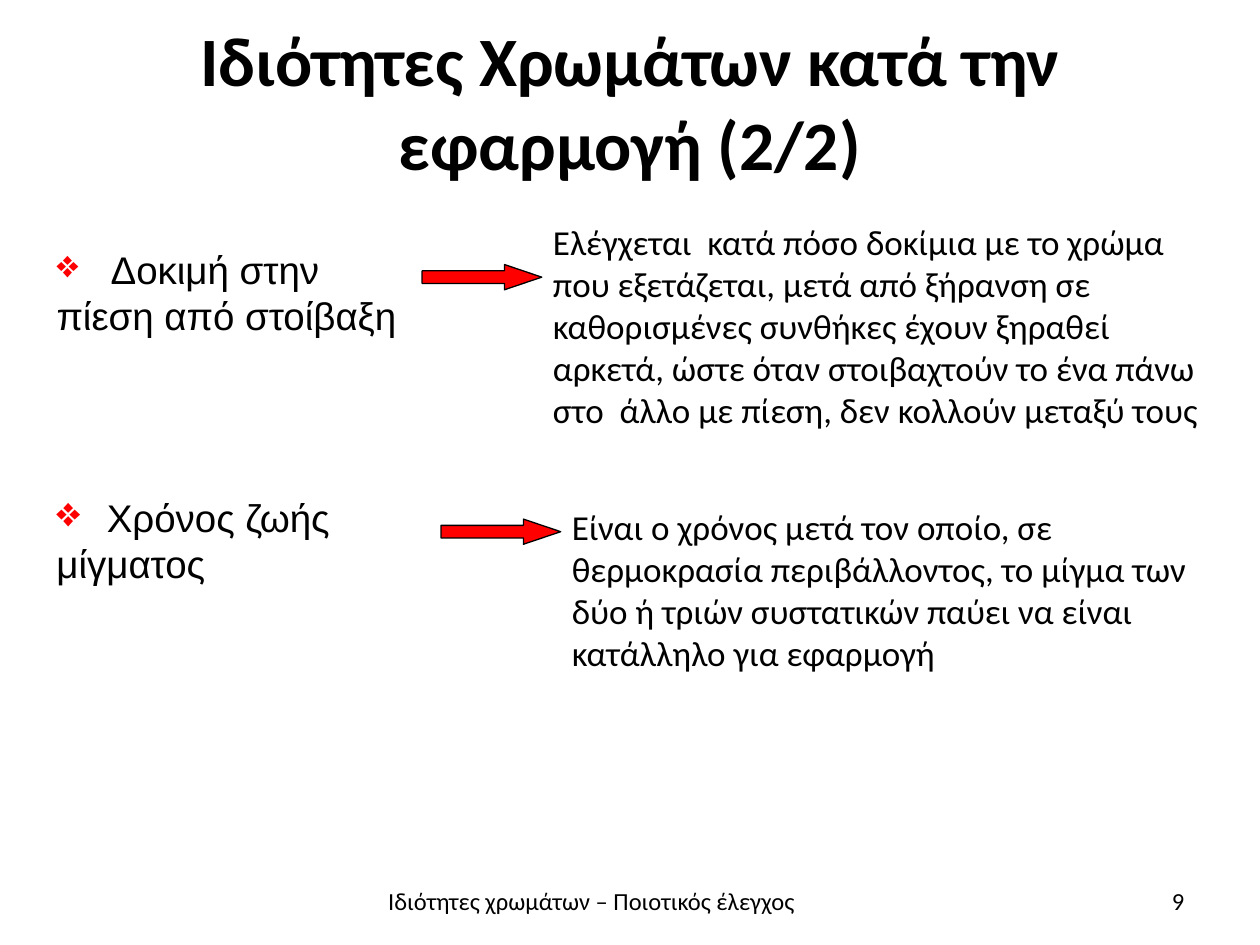
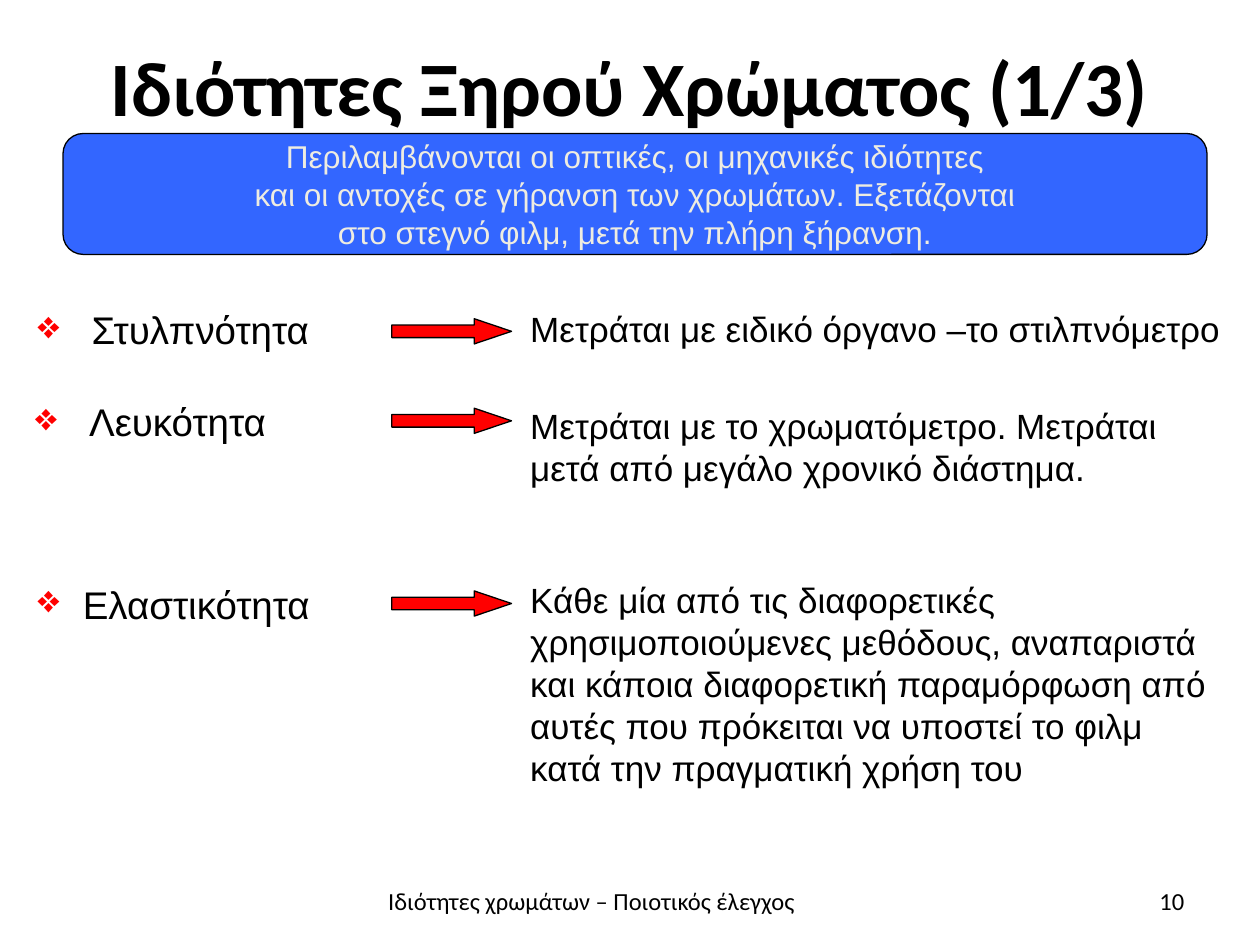
from copy import deepcopy

from lxml.etree import SubElement
from pptx import Presentation
from pptx.dml.color import RGBColor
from pptx.enum.shapes import MSO_SHAPE, PP_PLACEHOLDER
from pptx.enum.text import MSO_ANCHOR, PP_ALIGN
from pptx.oxml.ns import qn
from pptx.util import Inches, Pt

BLACK, RED, BLUE, CREAM = "000000", "FF0000", "3366FF", "EEECE1"
FOOTER = "Ιδιότητες χρωμάτων – Ποιοτικός έλεγχος"
FIRST_NUMBER = 9
ARROW_SIZE = Inches(0.95), Inches(0.2)

# Each row: label (text, box, text start, bullet %), arrow corner, explanation (text, box)
SLIDES = [
    {
        "title": "Ιδιότητες Χρωμάτων κατά την εφαρμογή (2/2)",
        "title_size": 39.6,
        "title_height": 1.18,
        "font": "Calibri",
        "intro": [],
        "rows": [
            (("Δοκιμή στην πίεση από στοίβαξη", (0.35, 1.9, 3.09, 1.4), 0.43, 100),
             (3.35, 2.1),
             ("Ελέγχεται  κατά πόσο δοκίμια με το χρώμα που εξετάζεται, μετά από "
              "ξήρανση σε καθορισμένες συνθήκες έχουν ξηραθεί αρκετά, ώστε όταν "
              "στοιβαχτούν το ένα πάνω στο  άλλο με πίεση, δεν κολλούν μεταξύ τους",
              (4.29, 1.7, 5.51, 1.78))),
            (("Χρόνος ζωής μίγματος", (0.35, 3.87, 3.07, 1.43), 0.4, 109),
             (3.5, 4.12),
             ("Είναι ο χρόνος μετά τον οποίο, σε θερμοκρασία περιβάλλοντος, το μίγμα "
              "των δύο ή τριών συστατικών παύει να είναι κατάλληλο για εφαρμογή",
              (4.44, 3.96, 5.36, 1.45))),
        ],
    },
    {
        "title": "Ιδιότητες Ξηρού Χρώματος (1/3)",
        "title_size": 44,
        "title_height": 0.94,
        "font": "Arial",
        "intro": [
            "Περιλαμβάνονται οι οπτικές, οι μηχανικές ιδιότητες",
            "και οι αντοχές σε γήρανση των χρωμάτων. Εξετάζονται",
            "στο στεγνό φιλμ, μετά την πλήρη ξήρανση.",
        ],
        "rows": [
            (("Στυλπνότητα", (0.2, 2.38, 3.33, 0.47), 0.43, 100),
             (3.11, 2.53),
             ("Μετράται με ειδικό όργανο –το στιλπνόμετρο", (4.11, 2.39, 5.68, 0.44))),
            (("Λευκότητα", (0.18, 3.11, 3.34, 0.47), 0.43, 100),
             (3.11, 3.24),
             ("Μετράται με το χρωματόμετρο. Μετράται μετά από μεγάλο χρονικό διάστημα.",
              (4.11, 3.16, 5.68, 0.77))),
            (("Ελαστικότητα", (0.2, 4.56, 3.07, 0.47), 0.36, 100),
             (3.11, 4.69),
             ("Κάθε μία από τις διαφορετικές χρησιμοποιούμενες μεθόδους, αναπαριστά και "
              "κάποια διαφορετική παραμόρφωση από αυτές που πρόκειται να υποστεί το φιλμ "
              "κατά την πραγματική χρήση του",
              (4.11, 4.54, 5.68, 1.78))),
        ],
    },
]


def paint(color_format, hex_color):
    color_format.rgb = RGBColor.from_string(hex_color)


def style(paragraph, size, font, color=BLACK, align=PP_ALIGN.LEFT, bold=False):
    paragraph.alignment = align
    paragraph.font.size = Pt(size)
    paragraph.font.name = font
    paragraph.font.bold = bold
    paint(paragraph.font.color, color)


deck = Presentation()
deck.slide_width, deck.slide_height = Inches(10), Inches(7.5)
title_only = deck.slide_layouts[5]

for number, content in enumerate(SLIDES, FIRST_NUMBER):
    slide = deck.slides.add_slide(title_only)

    # Title
    title = slide.shapes.title
    title.left, title.top = Inches(0.5), Inches(0.21)
    title.width, title.height = Inches(9), Inches(content["title_height"])
    title.text_frame.text = content["title"]
    title.text_frame.vertical_anchor = MSO_ANCHOR.MIDDLE
    style(title.text_frame.paragraphs[0], content["title_size"], "Calibri",
          align=PP_ALIGN.CENTER, bold=True)

    # Introductory panel
    if content["intro"]:
        panel = slide.shapes.add_shape(
            MSO_SHAPE.FLOWCHART_ALTERNATE_PROCESS,
            Inches(0.5), Inches(1.06), Inches(9.08), Inches(0.96))
        panel.shadow.inherit = False
        panel.fill.solid()
        paint(panel.fill.fore_color, BLUE)
        paint(panel.line.color, BLACK)
        panel.line.width = Pt(0.75)
        panel.text_frame.word_wrap = False
        panel.text_frame.vertical_anchor = MSO_ANCHOR.MIDDLE
        panel.text_frame.text = "\n".join(content["intro"])
        for paragraph in panel.text_frame.paragraphs:
            style(paragraph, 18, "Arial", CREAM, PP_ALIGN.CENTER)

    # Rows: property, arrow, explanation
    for (name, name_box, text_start, bullet_size), corner, (details, details_box) in content["rows"]:
        row = slide.shapes.add_group_shape().shapes

        label = row.add_textbox(*map(Inches, name_box)).text_frame
        label.word_wrap = True
        label.text = "\t" + name
        bullet = label.paragraphs[0]._p.get_or_add_pPr()
        bullet.set("marL", "0")
        bullet.set("indent", "0")
        SubElement(SubElement(bullet, qn("a:buClr")), qn("a:srgbClr"), val=RED)
        SubElement(bullet, qn("a:buSzPct"), val=str(bullet_size * 1000))
        SubElement(bullet, qn("a:buChar"), char="❖")
        SubElement(SubElement(bullet, qn("a:tabLst")), qn("a:tab"),
                   pos=str(Inches(text_start)), algn="l")
        style(label.paragraphs[0], 22, "Arial")

        arrow = row.add_shape(MSO_SHAPE.RIGHT_ARROW, *map(Inches, corner), *ARROW_SIZE)
        arrow.shadow.inherit = False
        arrow.adjustments[1] = 1.48
        arrow.fill.solid()
        paint(arrow.fill.fore_color, RED)
        paint(arrow.line.color, BLACK)
        arrow.line.width = Pt(0.75)

        explanation = row.add_textbox(*map(Inches, details_box)).text_frame
        explanation.word_wrap = True
        explanation.text = details
        style(explanation.paragraphs[0], 20, content["font"])

    # Footer and slide number, in the layout's placeholders
    footer_items = {
        PP_PLACEHOLDER.FOOTER: (FOOTER, 2.8, 3.79, PP_ALIGN.CENTER),
        PP_PLACEHOLDER.SLIDE_NUMBER: (str(number), 7.17, 2.33, PP_ALIGN.RIGHT),
    }
    for source in title_only.placeholders:
        if source.placeholder_format.type in footer_items:
            text, left, width, align = footer_items[source.placeholder_format.type]
            slide.shapes._spTree.append(deepcopy(source._element))
            footer = slide.shapes[-1]
            footer.left, footer.top = Inches(left), Inches(6.95)
            footer.width, footer.height = Inches(width), Inches(0.4)
            footer.text_frame.text = text
            footer.text_frame.vertical_anchor = MSO_ANCHOR.MIDDLE
            style(footer.text_frame.paragraphs[0], 14, "Calibri", align=align)

deck.save("out.pptx")
